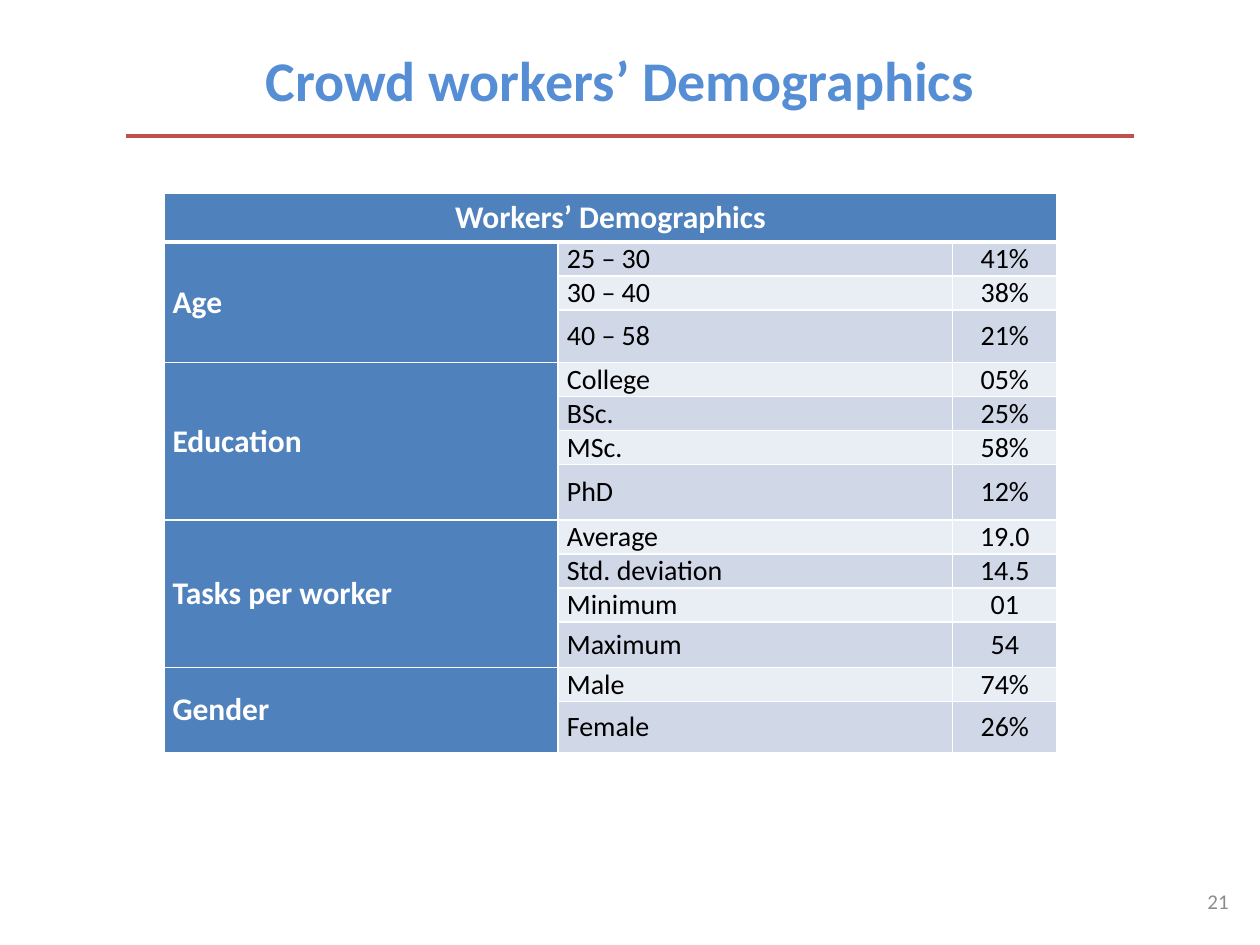
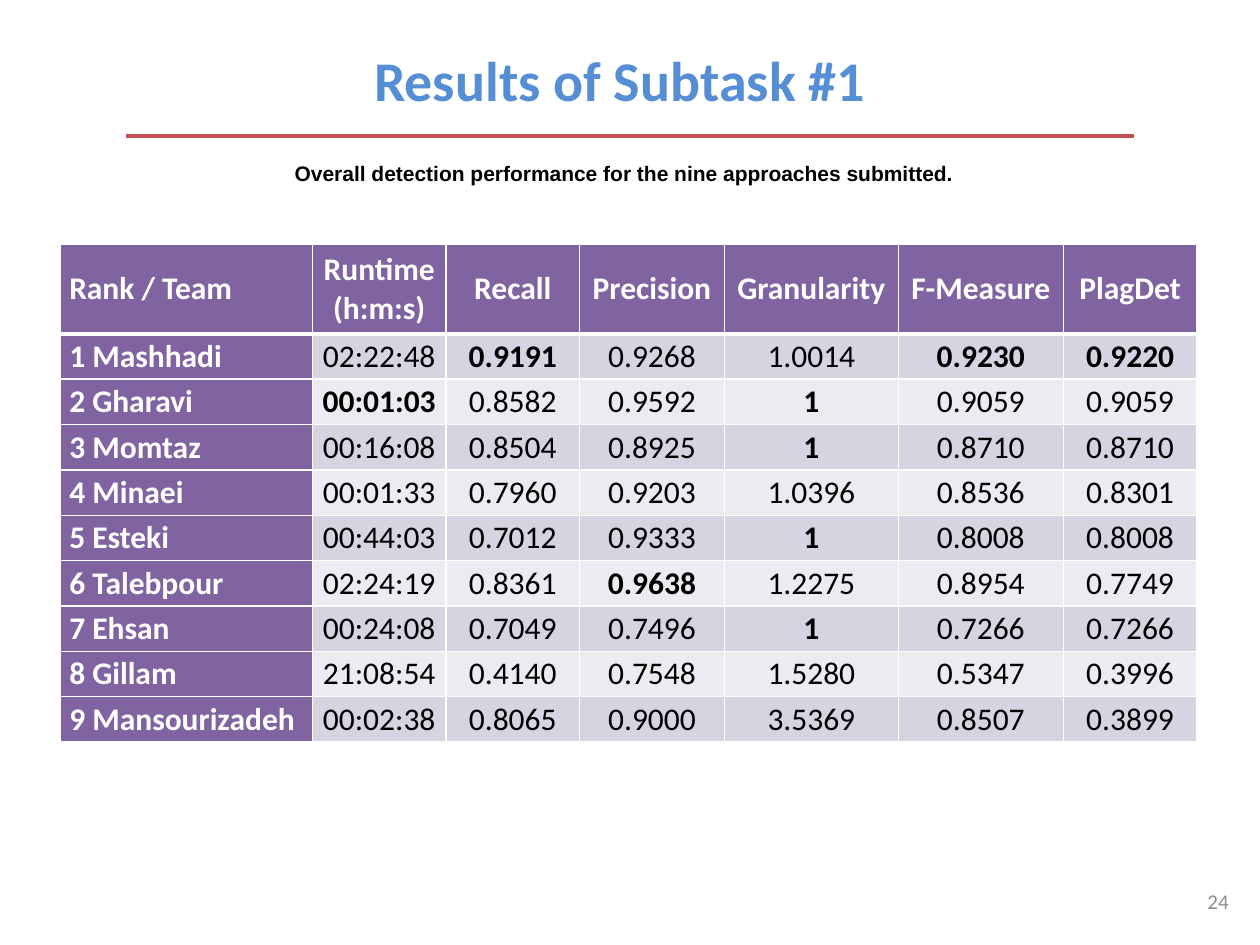
from lxml.etree import SubElement
from pptx import Presentation
from pptx.dml.color import RGBColor
from pptx.enum.shapes import MSO_CONNECTOR
from pptx.enum.text import MSO_ANCHOR, PP_ALIGN
from pptx.oxml.ns import qn
from pptx.util import Inches, Pt

WHITE = "FFFFFF"
BLACK = "000000"
TITLE_BLUE = "558ED5"
RULE_RED = "C0504D"
NUMBER_GREY = "8C8C8C"
BLUE_THEME = ("4F81BD", "D0D8E8", "E9EDF4")
PURPLE_THEME = ("8064A2", "D8D3E0", "EDEAF0")

DEMOGRAPHICS = {
    "Age": [("25 – 30", "41%"), ("30 – 40", "38%"), ("40 – 58", "21%")],
    "Education": [("College", "05%"), ("BSc.", "25%"), ("MSc.", "58%"), ("PhD", "12%")],
    "Tasks per worker": [("Average", "19.0"), ("Std. deviation", "14.5"),
                         ("Minimum", "01"), ("Maximum", "54")],
    "Gender": [("Male", "74%"), ("Female", "26%")],
}
LAST_ROW_HEIGHTS = {"Age": 0.42, "Education": 0.44, "Tasks per worker": 0.36, "Gender": 0.41}

RESULT_HEADINGS = ("Rank / Team", "Runtime (h:m:s)", "Recall", "Precision",
                   "Granularity", "F-Measure", "PlagDet")
RESULTS = [
    ("1 Mashhadi", "02:22:48", "0.9191", "0.9268", "1.0014", "0.9230", "0.9220"),
    ("2 Gharavi", "00:01:03", "0.8582", "0.9592", "1", "0.9059", "0.9059"),
    ("3 Momtaz", "00:16:08", "0.8504", "0.8925", "1", "0.8710", "0.8710"),
    ("4 Minaei", "00:01:33", "0.7960", "0.9203", "1.0396", "0.8536", "0.8301"),
    ("5 Esteki", "00:44:03", "0.7012", "0.9333", "1", "0.8008", "0.8008"),
    ("6 Talebpour", "02:24:19", "0.8361", "0.9638", "1.2275", "0.8954", "0.7749"),
    ("7 Ehsan", "00:24:08", "0.7049", "0.7496", "1", "0.7266", "0.7266"),
    ("8 Gillam", "21:08:54", "0.4140", "0.7548", "1.5280", "0.5347", "0.3996"),
    ("9 Mansourizadeh", "00:02:38", "0.8065", "0.9000", "3.5369", "0.8507", "0.3899"),
]
BEST_PICKERS = (min, max, max, min, max, max)


def color(hex_code):
    return RGBColor.from_string(hex_code)


def write(text_frame, text, size, hex_code, bold=False, align=PP_ALIGN.LEFT, font="Calibri"):
    text_frame.text = text
    para = text_frame.paragraphs[0]
    para.alignment = align
    for span in para.runs:
        span.font.name = font
        span.font.size = Pt(size)
        span.font.bold = bold
        span.font.color.rgb = color(hex_code)
    return para


def add_text(page, place, text, size, hex_code, anchor=MSO_ANCHOR.MIDDLE, **style):
    box = page.shapes.add_textbox(*(Inches(length) for length in place))
    box.text_frame.word_wrap = True
    box.text_frame.vertical_anchor = anchor
    write(box.text_frame, text, size, hex_code, **style)
    return box


def add_page(deck, title, number):
    page = deck.slides.add_slide(deck.slide_layouts[6])
    add_text(page, (0.42, 0, 9, 1.25), title, 32, TITLE_BLUE, bold=True, align=PP_ALIGN.CENTER)
    rule = page.shapes.add_connector(
        MSO_CONNECTOR.STRAIGHT, Inches(1), Inches(1.08), Inches(9), Inches(1.08))
    rule.line.color.rgb = color(RULE_RED)
    rule.line.width = Pt(2.25)
    SubElement(rule._element.spPr, qn("a:effectLst"))
    add_text(page, (7.52, 6.95, 2.33, 0.4), str(number), 12, NUMBER_GREY, align=PP_ALIGN.RIGHT)
    return page


def add_grid(page, left, top, widths, heights):
    frame = page.shapes.add_table(
        len(heights), len(widths), Inches(left), Inches(top),
        Inches(sum(widths)), Inches(sum(heights)))
    table = frame.table
    for column, width in zip(table.columns, widths):
        column.width = Inches(width)
    for row, height in zip(table.rows, heights):
        row.height = Inches(height)
    return table


def set_borders(cell, row):
    widths = {"L": 1, "R": 1, "T": 3 if row == 1 else 1, "B": 3 if row == 0 else 1}
    properties = cell._tc.get_or_add_tcPr()
    for side, width in widths.items():
        line = SubElement(properties, qn(f"a:ln{side}"), w=str(Pt(width)))
        fill = SubElement(line, qn("a:solidFill"))
        SubElement(fill, qn("a:srgbClr"), val=WHITE)


def style_cells(table, theme):
    strong, dark_band, light_band = theme
    for row in range(len(table.rows)):
        band = dark_band if row % 2 else light_band
        for column in range(len(table.columns)):
            cell = table.cell(row, column)
            set_borders(cell, row)
            cell.fill.solid()
            cell.fill.fore_color.rgb = color(strong if row == 0 or column == 0 else band)
            cell.margin_left = cell.margin_right = Inches(0.07)
            cell.margin_top = cell.margin_bottom = 0
            cell.vertical_anchor = MSO_ANCHOR.MIDDLE


def fill_cell(cell, text, size=18, hex_code=BLACK, bold=False, align=PP_ALIGN.CENTER):
    para = write(cell.text_frame, text, size, hex_code, bold, align)
    para.space_after = Pt(4)


def fill_heading(cell, text, align=PP_ALIGN.CENTER):
    fill_cell(cell, text, hex_code=WHITE, bold=True, align=align)


def add_demographics_table(page):
    heights = [0.39]
    for group, entries in DEMOGRAPHICS.items():
        heights += [0.27] * (len(entries) - 1) + [LAST_ROW_HEIGHTS[group]]
    table = add_grid(page, 1.3, 1.53, (3.13, 3.13, 0.83), heights)
    style_cells(table, BLUE_THEME)
    table.cell(0, 0).merge(table.cell(0, 2))
    fill_heading(table.cell(0, 0), "Workers’ Demographics")
    row = 1
    for group, entries in DEMOGRAPHICS.items():
        table.cell(row, 0).merge(table.cell(row + len(entries) - 1, 0))
        fill_heading(table.cell(row, 0), group, PP_ALIGN.LEFT)
        for label, value in entries:
            fill_cell(table.cell(row, 1), label, size=16, align=PP_ALIGN.LEFT)
            fill_cell(table.cell(row, 2), value, size=16)
            row += 1


def add_results_table(page):
    widths = (2, 1.06, 1.06, 1.15, 1.38, 1.31, 1.06)
    table = add_grid(page, 0.48, 1.94, widths, [0.71] + [0.36] * len(RESULTS))
    style_cells(table, PURPLE_THEME)
    for column, heading in enumerate(RESULT_HEADINGS):
        fill_heading(table.cell(0, column), heading,
                     PP_ALIGN.CENTER if column else PP_ALIGN.LEFT)
    measures = list(zip(*RESULTS))[1:]
    best = [pick(values) for pick, values in zip(BEST_PICKERS, measures)]
    for row, (team, *scores) in enumerate(RESULTS, start=1):
        fill_heading(table.cell(row, 0), team, PP_ALIGN.JUSTIFY)
        for column, score in enumerate(scores, start=1):
            fill_cell(table.cell(row, column), score, bold=score == best[column - 1])


def main():
    deck = Presentation()
    deck.slide_width = Inches(10)
    deck.slide_height = Inches(7.5)

    page = add_page(deck, "Crowd workers’ Demographics", 21)
    add_demographics_table(page)

    page = add_page(deck, "Results of Subtask #1", 24)
    add_results_table(page)
    caption = add_text(page, (2.24, 1.2, 5.67, 0.61),
                       "Overall detection performance for the nine approaches submitted.",
                       12, BLACK, anchor=MSO_ANCHOR.TOP, bold=True, font="Arial")
    caption.text_frame.margin_top = Inches(0.07)

    deck.save("out.pptx")


if __name__ == "__main__":
    main()
